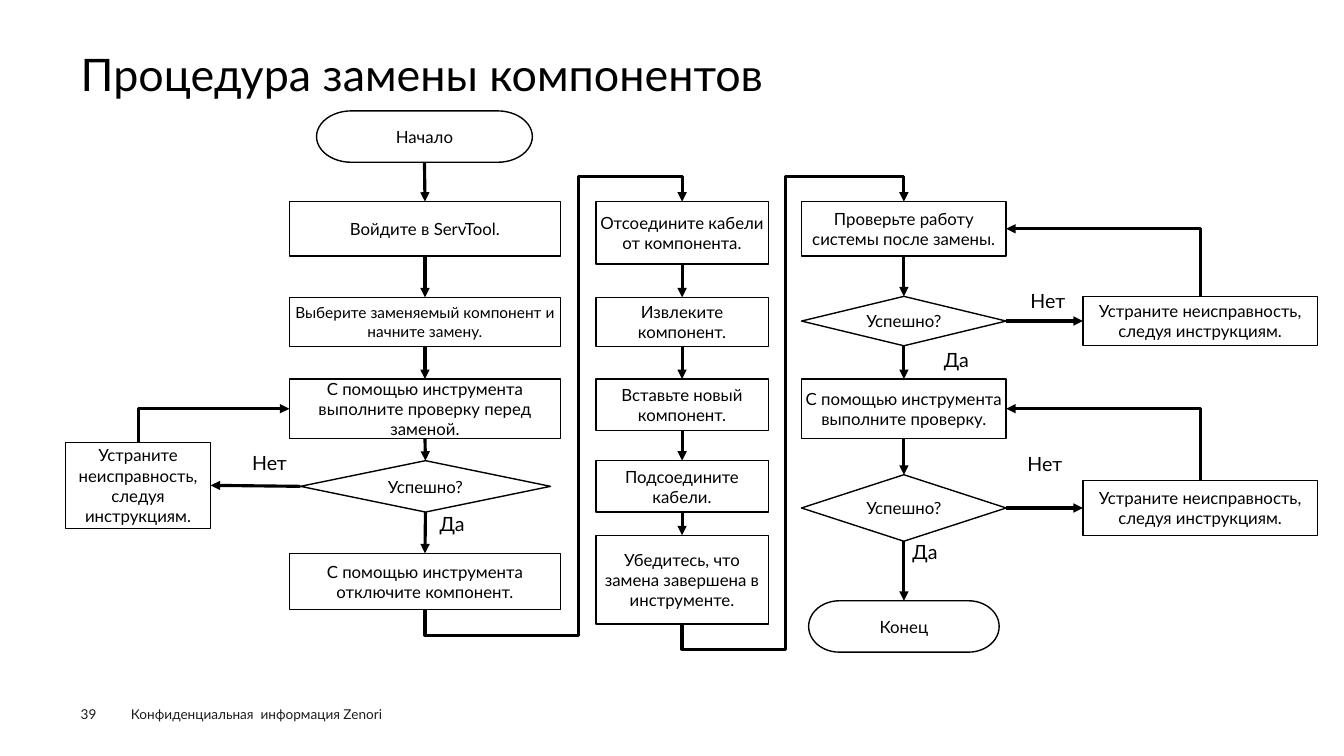
from dataclasses import dataclass

import lxml.etree
import pptx
import pptx.dml.color
import pptx.enum.shapes
import pptx.enum.text
import pptx.oxml.ns
import pptx.shapes.base
import pptx.shapes.connector
import pptx.slide
import pptx.text.text
import pptx.util

Inches = pptx.util.Inches
Pt = pptx.util.Pt
qn = pptx.oxml.ns.qn
Kind = pptx.enum.shapes.MSO_SHAPE
Line = pptx.enum.shapes.MSO_CONNECTOR
Align = pptx.enum.text.PP_ALIGN
Anchor = pptx.enum.text.MSO_ANCHOR

FONT = "Lato"
BLACK = "000000"
FOOTER_COLOR = "1D1D1B"
TOP, LEFT, BOTTOM, RIGHT = range(4)
DETOUR = Inches(0.25)


@dataclass(frozen=True)
class Column:
    left: float
    width: float


@dataclass(frozen=True)
class Step:
    column: Column
    top: float
    height: float
    text: str
    kind: Kind = Kind.FLOWCHART_PROCESS
    size: float = 12


@dataclass(frozen=True)
class Caption:
    left: float
    top: float
    width: float
    height: float
    text: str
    size: float = 14
    color: str = BLACK
    inset_x: float = 0.04
    inset_y: float = 0.05


@dataclass(frozen=True)
class Link:
    source: str
    source_side: int
    target: str
    target_side: int


@dataclass(frozen=True)
class Route:
    link: Link
    lane: float | None = None


PREPARE = Column(2.87, 2.69)
START = Column(3.14, 2.14)
PRECHECK = Column(2.98, 2.48)
PREFIX = Column(0.65, 1.44)
REPLACE = Column(5.91, 1.71)
VERIFY = Column(7.95, 2.03)
END = Column(8.02, 1.89)
FIX = Column(10.74, 2.33)

SUCCESS = "Успешно?"
FIX_TEXT = "Устраните неисправность, следуя инструкциям."

STEPS = {
    "start": Step(START, 1.1, 0.51, "Начало", Kind.FLOWCHART_TERMINATOR),
    "login": Step(PREPARE, 2, 0.54, "Войдите в ServTool."),
    "select": Step(PREPARE, 2.95, 0.49, "Выберите заменяемый компонент и начните замену.", size=11),
    "precheck": Step(PREPARE, 3.76, 0.59, "С помощью инструмента выполните проверку перед заменой."),
    "precheck ok": Step(PRECHECK, 4.57, 0.51, SUCCESS, Kind.FLOWCHART_DECISION),
    "precheck fix": Step(PREFIX, 4.39, 0.85, FIX_TEXT),
    "power off": Step(PREPARE, 5.49, 0.56, "С помощью инструмента отключите компонент."),
    "unplug": Step(REPLACE, 2, 0.62, "Отсоедините кабели от компонента."),
    "remove": Step(REPLACE, 2.95, 0.49, "Извлеките компонент."),
    "insert": Step(REPLACE, 3.76, 0.51, "Вставьте новый компонент."),
    "plug in": Step(REPLACE, 4.57, 0.51, "Подсоедините кабели."),
    "confirm": Step(REPLACE, 5.31, 0.88, "Убедитесь, что замена завершена в инструменте."),
    "system": Step(VERIFY, 2, 0.54, "Проверьте работу системы после замены."),
    "system ok": Step(VERIFY, 2.94, 0.49, SUCCESS, Kind.FLOWCHART_DECISION),
    "system fix": Step(FIX, 2.94, 0.49, FIX_TEXT),
    "check": Step(VERIFY, 3.76, 0.59, "С помощью инструмента выполните проверку."),
    "check ok": Step(VERIFY, 4.71, 0.66, SUCCESS, Kind.FLOWCHART_DECISION),
    "check fix": Step(FIX, 4.77, 0.54, FIX_TEXT),
    "end": Step(END, 5.96, 0.51, "Конец", Kind.FLOWCHART_TERMINATOR),
}

CHAINS = [
    ["start", "login", "select", "precheck", "precheck ok", "power off"],
    ["unplug", "remove", "insert", "plug in", "confirm"],
    ["system", "system ok", "check", "check ok", "end"],
]
FAILURES = [
    Link("precheck ok", LEFT, "precheck fix", RIGHT),
    Link("system ok", RIGHT, "system fix", LEFT),
    Link("check ok", RIGHT, "check fix", LEFT),
]
ROUTES = [
    Route(Link("precheck fix", TOP, "precheck", LEFT)),
    Route(Link("system fix", TOP, "system", RIGHT)),
    Route(Link("check fix", TOP, "check", RIGHT)),
    Route(Link("power off", BOTTOM, "unplug", TOP), lane=5.74),
    Route(Link("confirm", BOTTOM, "system", TOP), lane=7.79),
]

CAPTIONS = [
    Caption(4.32, 5.03, 0.55, 0.35, "Да"),
    Caption(2.46, 4.42, 0.52, 0.35, "Нет"),
    Caption(9.01, 5.31, 0.55, 0.35, "Да"),
    Caption(9.32, 3.4, 0.55, 0.35, "Да"),
    Caption(10.18, 2.82, 0.52, 0.35, "Нет"),
    Caption(10.15, 4.43, 0.52, 0.35, "Нет"),
    Caption(0.8, 7, 0.55, 0.16, "39", 9.7, FOOTER_COLOR, 0, 0),
    Caption(1.2, 6.95, 3.59, 0.26, "Конфиденциальная  информация Zenori", 9.7, FOOTER_COLOR, 0.1, 0.05),
]


def rgb(color: str) -> pptx.dml.color.RGBColor:
    return pptx.dml.color.RGBColor.from_string(color)


def write(frame: pptx.text.text.TextFrame, text: str, size: float, color: str = BLACK,
          align: Align = Align.LEFT, anchor: Anchor = Anchor.TOP,
          inset_x: float = 0.04, inset_y: float = 0.05) -> None:
    frame.word_wrap = True
    frame.vertical_anchor = anchor
    frame.margin_left = frame.margin_right = Inches(inset_x)
    frame.margin_top = frame.margin_bottom = Inches(inset_y)
    paragraph = frame.paragraphs[0]
    paragraph.alignment = align
    run = paragraph.add_run()
    run.text = text
    run.font.name = FONT
    run.font.size = Pt(size)
    run.font.color.rgb = rgb(color)


def draw_step(slide: pptx.slide.Slide, step: Step) -> pptx.shapes.base.BaseShape:
    box = slide.shapes.add_shape(step.kind, Inches(step.column.left), Inches(step.top),
                                 Inches(step.column.width), Inches(step.height))
    box.shadow.inherit = False
    box.fill.background()
    box.line.color.rgb = rgb(BLACK)
    box.line.width = Pt(1)
    write(box.text_frame, step.text, step.size, align=Align.CENTER, anchor=Anchor.MIDDLE)
    return box


def draw_link(slide: pptx.slide.Slide, boxes: dict[str, pptx.shapes.base.BaseShape], link: Link,
              line: Line = Line.STRAIGHT) -> pptx.shapes.connector.Connector:
    arrow = slide.shapes.add_connector(line, 0, 0, 0, 0)
    arrow.begin_connect(boxes[link.source], link.source_side)
    arrow.end_connect(boxes[link.target], link.target_side)
    arrow.line.color.rgb = rgb(BLACK)
    arrow.line.width = Pt(2.25)
    properties = arrow.element.spPr
    lxml.etree.SubElement(properties.find(qn("a:ln")), qn("a:tailEnd"), type="triangle")
    lxml.etree.SubElement(properties, qn("a:effectLst"))
    return arrow


def draw_route(slide: pptx.slide.Slide, boxes: dict[str, pptx.shapes.base.BaseShape], route: Route) -> None:
    arrow = draw_link(slide, boxes, route.link, Line.ELBOW)
    start_x = arrow.begin_x
    run, rise = arrow.end_x - start_x, arrow.begin_y - arrow.end_y
    center_x, center_y = (start_x + arrow.end_x) // 2, (arrow.begin_y + arrow.end_y) // 2
    arrow.width, arrow.height = rise, abs(run)
    arrow.left, arrow.top = center_x - rise // 2, center_y - abs(run) // 2
    frame = arrow.element.spPr.find(qn("a:xfrm"))
    frame.set("rot", str((90 if run > 0 else 270) * 60000))
    frame.set("flipH", "1" if run > 0 else "0")
    frame.set("flipV", "1")
    geometry = arrow.element.spPr.find(qn("a:prstGeom"))
    geometry.set("prst", "bentConnector2" if route.lane is None else "bentConnector5")
    if route.lane is not None:
        bends = (-DETOUR / rise, (Inches(route.lane) - start_x) / run, 1 + DETOUR / rise)
        for number, bend in enumerate(bends, 1):
            lxml.etree.SubElement(geometry.find(qn("a:avLst")), qn("a:gd"),
                                  name=f"adj{number}", fmla=f"val {round(bend * 100000)}")


def main() -> None:
    deck = pptx.Presentation()
    deck.slide_width, deck.slide_height = Inches(13.33), Inches(7.5)
    slide = deck.slides.add_slide(deck.slide_layouts[5])
    title = slide.shapes.title
    title.left, title.top, title.width, title.height = map(Inches, (0.8, 0.49, 11.73, 0.54))
    write(title.text_frame, "Процедура замены компонентов", 32, anchor=Anchor.MIDDLE, inset_x=0, inset_y=0)
    title.text_frame.paragraphs[0].line_spacing = 0.9

    boxes = {key: draw_step(slide, step) for key, step in STEPS.items()}
    sequence = [Link(a, BOTTOM, b, TOP) for chain in CHAINS for a, b in zip(chain, chain[1:])]
    for link in sequence + FAILURES:
        draw_link(slide, boxes, link)
    for route in ROUTES:
        draw_route(slide, boxes, route)
    for caption in CAPTIONS:
        area = slide.shapes.add_textbox(Inches(caption.left), Inches(caption.top),
                                        Inches(caption.width), Inches(caption.height))
        write(area.text_frame, caption.text, caption.size, caption.color,
              inset_x=caption.inset_x, inset_y=caption.inset_y)
    deck.save("out.pptx")


if __name__ == "__main__":
    main()
